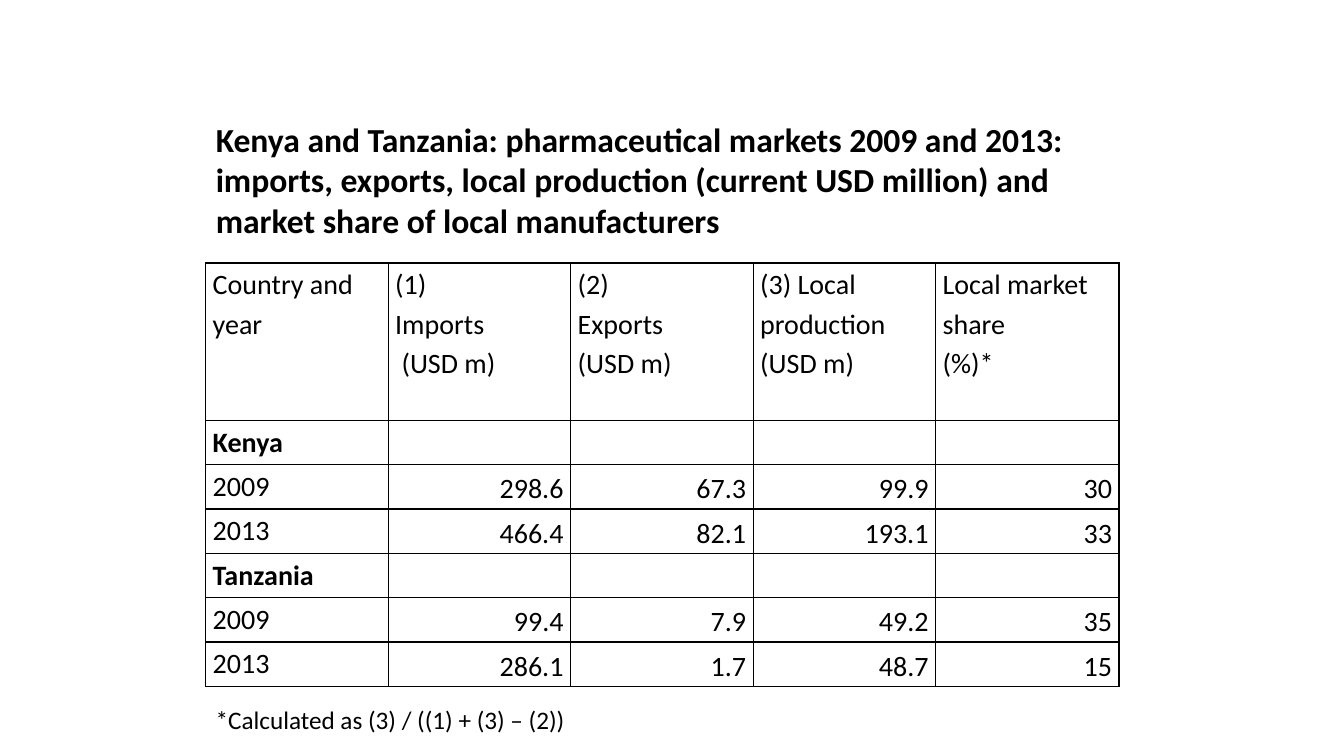
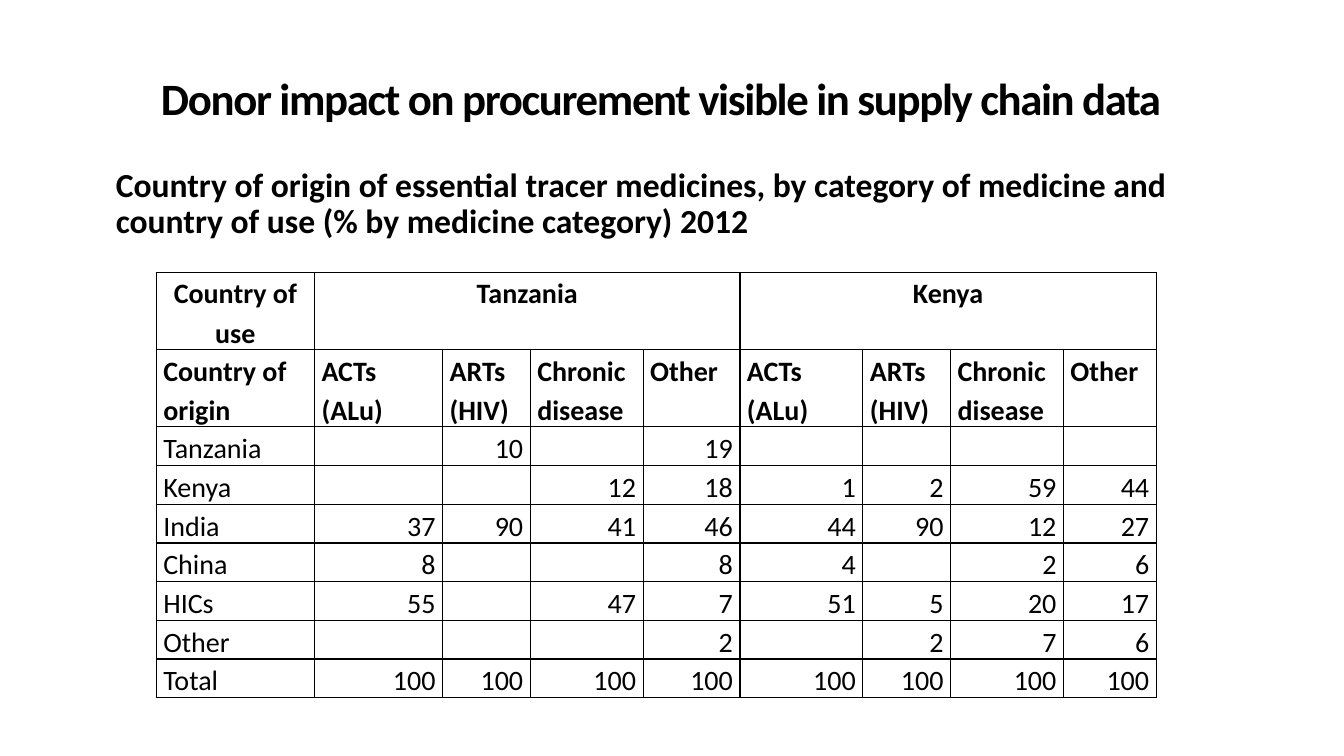
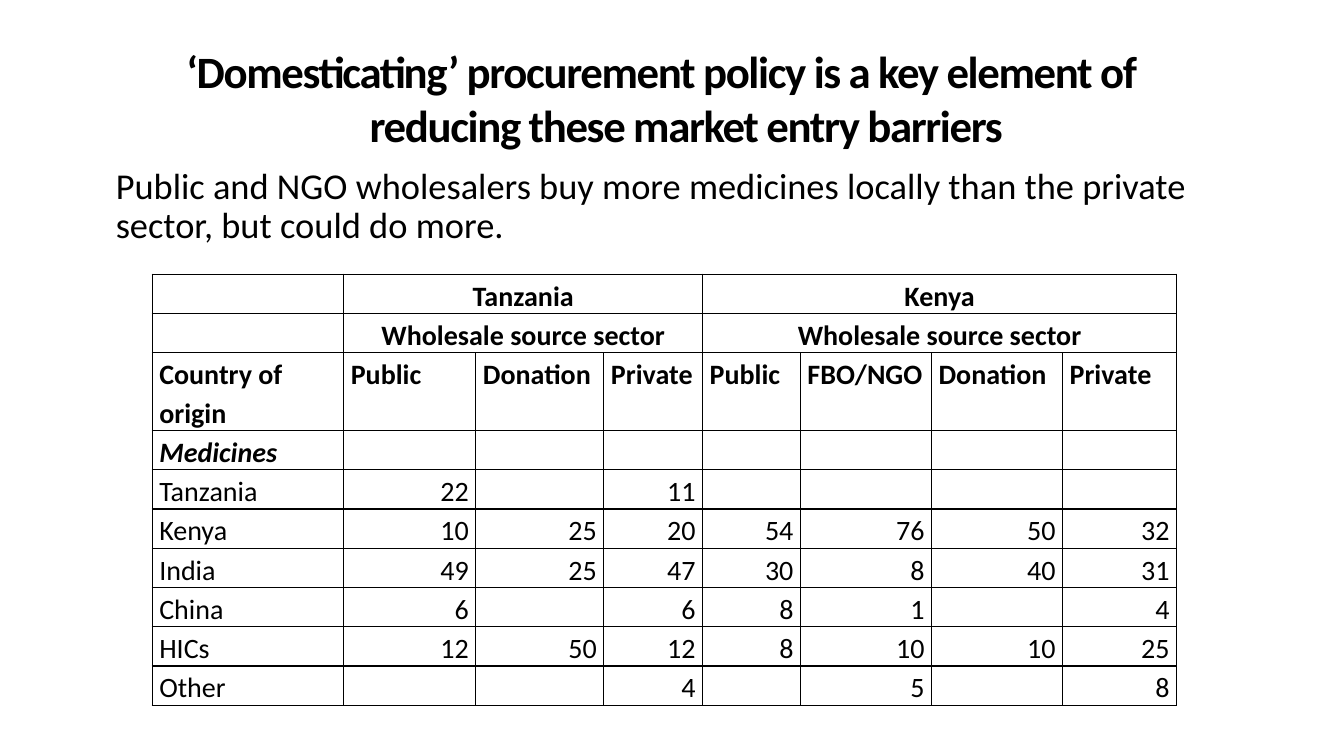
from pptx import Presentation
from pptx.dml.color import RGBColor
from pptx.enum import text
from pptx.oxml import parse_xml
from pptx.oxml.ns import nsdecls
from pptx.util import Inches, Pt

COLOURS = {"ink": "000000", "border": "000000"}
FONT = "Calibri"
LEFT, CENTRE, RIGHT = text.PP_ALIGN.LEFT, text.PP_ALIGN.CENTER, text.PP_ALIGN.RIGHT
TOP, MIDDLE = text.MSO_ANCHOR.TOP, text.MSO_ANCHOR.MIDDLE
HEADLINE_BOX = (1.05, 0.46, 11.01, 1.01)
BODY_BOX = (1.05, 1.62, 11.27, 5.73)


class Deck:
    def __init__(self):
        self.presentation = Presentation()
        self.presentation.slide_width = Inches(13.33)
        self.presentation.slide_height = Inches(7.5)
        self.slide = None

    def new_slide(self):
        layout = self.presentation.slide_layouts[5]
        self.slide = self.presentation.slides.add_slide(layout)

    def style(self, paragraph, size, bold=False, italic=False, align=LEFT, spacing=1.0):
        font = paragraph.font
        font.name, font.size, font.bold, font.italic = FONT, Pt(size), bold, italic
        font.color.rgb = RGBColor.from_string(COLOURS["ink"])
        paragraph.alignment = align
        paragraph.line_spacing = spacing

    def title(self, wording, box, size, align=LEFT, anchor=TOP):
        heading = self.slide.shapes.title
        heading.left, heading.top, heading.width, heading.height = map(Inches, box)
        frame = heading.text_frame
        frame.text = wording
        frame.word_wrap = True
        frame.auto_size = text.MSO_AUTO_SIZE.NONE
        frame.vertical_anchor = anchor
        self.style(frame.paragraphs[0], size, bold=True, align=align)
        return frame.paragraphs[0]

    def headline(self, wording):
        paragraph = self.title(wording, HEADLINE_BOX, 32, CENTRE, MIDDLE)
        indent = paragraph._p.get_or_add_pPr()
        indent.set("marL", str(Inches(0.5)))
        indent.set("indent", str(Inches(-0.5)))
        paragraph.runs[0]._r.get_or_add_rPr().set("spc", "-100")

    def words(self, wording, box, size, bold=False, spacing=1.0, before=0):
        frame = self.slide.shapes.add_textbox(*map(Inches, box)).text_frame
        frame.word_wrap = True
        frame.text = wording
        paragraph = frame.paragraphs[0]
        self.style(paragraph, size, bold, spacing=spacing)
        paragraph.space_before = Pt(before)

    def body(self, wording, size, bold=False):
        self.words(wording, BODY_BOX, size, bold, spacing=0.9, before=10)

    def border(self, cell):
        properties = cell._tc.get_or_add_tcPr()
        for side in ("lnL", "lnR", "lnT", "lnB"):
            properties.append(parse_xml(
                f'<a:{side} {nsdecls("a")} w="{Pt(1)}"><a:solidFill>'
                f'<a:srgbClr val="{COLOURS["border"]}"/></a:solidFill></a:{side}>'))

    def table(self, corner, widths, heights, rows, header_rows,
              bold_header=True, groups=(), italic_label=None):
        size = (sum(widths), sum(heights))
        grid = self.slide.shapes.add_table(
            len(rows), len(widths), *map(Inches, corner + size)).table
        grid.first_row = grid.horz_banding = False
        for column, width in zip(grid.columns, widths):
            column.width = Inches(width)
        for row, height in zip(grid.rows, heights):
            row.height = Inches(height)
        for r, line in enumerate(rows):
            is_header = r < header_rows
            is_group_row = r < header_rows - 1
            is_section = not is_header and not any(line[1:])
            for c, wording in enumerate(line):
                cell = grid.cell(r, c)
                is_value = not is_header and c > 0
                cell.text = wording
                cell.margin_left = cell.margin_right = Inches(0.07)
                cell.margin_top = cell.margin_bottom = 0
                cell.vertical_anchor = MIDDLE if is_value else TOP
                self.border(cell)
                cell.fill.background()
                align = CENTRE if is_group_row else RIGHT if is_value else LEFT
                bold = bold_header if is_header else is_section
                for paragraph in cell.text_frame.paragraphs:
                    self.style(paragraph, 20, bold, wording == italic_label, align, 1.15)
            if is_group_row:
                for first, last in groups:
                    grid.cell(r, first).merge(grid.cell(r, last))


def split_rows(*lines):
    return [line.split("|") for line in lines]


def markets(deck):
    deck.new_slide()
    deck.title("Kenya and Tanzania: pharmaceutical markets 2009 and 2013: imports, exports, "
               "local production (current USD million) and market share of local manufacturers",
               (2.04, 1.13, 9.26, 1.31), 24)
    deck.table((2.04, 2.61), [1.81] * 4 + [1.82], [1.56] + [0.44] * 6, split_rows(
        "Country and year|(1)\nImports\n (USD m)|(2)\nExports\n(USD m)"
        "|(3) Local production\n(USD m)|Local market share\n(%)*",
        "Kenya||||",
        "2009|298.6|67.3|99.9|30",
        "2013|466.4|82.1|193.1|33",
        "Tanzania||||",
        "2009|99.4|7.9|49.2|35",
        "2013|286.1|1.7|48.7|15"), header_rows=1, bold_header=False)
    deck.words("*Calculated as (3) / ((1) + (3) – (2))", (2.04, 6.94, 4.38, 0.4), 18)


def donor_impact(deck):
    deck.new_slide()
    deck.headline("Donor impact on procurement visible in supply chain data")
    deck.body("Country of origin of essential tracer medicines, by category of medicine and "
              "country of use (% by medicine category) 2012", 24, bold=True)
    categories = "|ACTs (ALu)|ARTs (HIV)|Chronic disease|Other"
    deck.table((1.55, 2.7), [1.57, 1.27, 0.87, 1.12, 0.96, 1.22, 0.87, 1.12, 0.92],
               [0.76] * 2 + [0.37] * 7, split_rows(
        "Country of use|Tanzania||||Kenya|||",
        "Country of origin" + categories * 2,
        "Tanzania||10||19||||",
        "Kenya|||12|18|1|2|59|44",
        "India|37|90|41|46|44|90|12|27",
        "China|8|||8|4||2|6",
        "HICs|55||47|7|51|5|20|17",
        "Other||||2||2|7|6",
        "Total" + "|100" * 8), header_rows=2, groups=((1, 4), (5, 8)))


def procurement_policy(deck):
    deck.new_slide()
    deck.headline("‘Domesticating’ procurement policy is a key element of "
                  "reducing these market entry barriers")
    deck.body("Public and NGO wholesalers buy more medicines locally than the private sector, "
              "but could do more.", 26)
    deck.table((1.51, 2.72), [1.9, 1.31, 1.27, 0.98, 0.97, 1.3, 1.3, 1.13],
               [0.39] * 2 + [0.77] + [0.39] * 7, split_rows(
        "|Tanzania|||Kenya|||",
        "|Wholesale source sector|||Wholesale source sector|||",
        "Country of origin|Public|Donation|Private|Public|FBO/NGO|Donation|Private",
        "Medicines|||||||",
        "Tanzania|22||11||||",
        "Kenya|10|25|20|54|76|50|32",
        "India|49|25|47|30|8|40|31",
        "China|6||6|8|1||4",
        "HICs|12|50|12|8|10|10|25",
        "Other|||4||5||8"), header_rows=3, groups=((1, 3), (4, 7)),
        italic_label="Medicines")


def main():
    deck = Deck()
    markets(deck)
    donor_impact(deck)
    procurement_policy(deck)
    deck.presentation.save("out.pptx")


if __name__ == "__main__":
    main()
